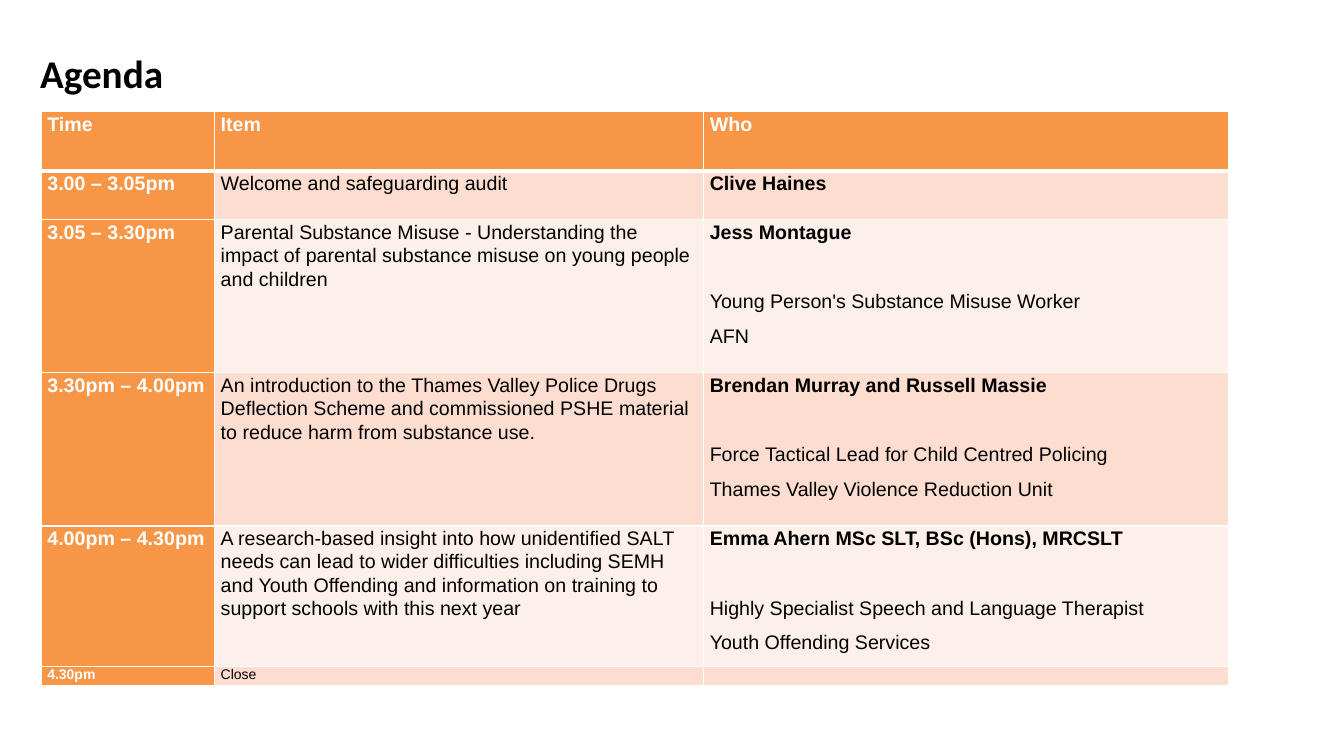
from dataclasses import dataclass

from lxml.etree import SubElement
from pptx import Presentation
from pptx.dml.color import RGBColor
from pptx.enum.text import MSO_ANCHOR as Anchor
from pptx.oxml.ns import qn
from pptx.util import Inches, Pt


@dataclass(frozen=True)
class Theme:
    orange: str = "F79646"
    band_dark: str = "FCDDCF"
    band_light: str = "FDEFE9"
    white: str = "FFFFFF"
    black: str = "000000"
    title_font: str = "Calibri"
    table_font: str = "Arial"
    title_size: int = 28
    table_size: int = 14
    closing_size: int = 10


@dataclass(frozen=True)
class AgendaRow:
    time: str
    item: str
    height: float
    who: str = ""
    roles: tuple[str, ...] = ()
    size: int = Theme.table_size


THEME = Theme()
COLUMN_WIDTHS = (1.72, 4.85, 5.21)
LINE_SPACING = 1.07
PARAGRAPH_GAP = 8
NAME_GAP = 33  # leaves one line free between a name and its roles

AGENDA = (
    AgendaRow("Time", "Item", 0.59, "Who"),
    AgendaRow("3.00 – 3.05pm", "Welcome and safeguarding audit", 0.48, "Clive Haines"),
    AgendaRow(
        "3.05 – 3.30pm",
        "Parental Substance Misuse - Understanding the impact of parental "
        "substance misuse on young people and children",
        1.52,
        "Jess Montague",
        ("Young Person's Substance Misuse Worker", "AFN"),
    ),
    AgendaRow(
        "3.30pm – 4.00pm",
        "An introduction to the Thames Valley Police Drugs Deflection Scheme and "
        "commissioned PSHE material to reduce harm from substance use.",
        1.52,
        "Brendan Murray and Russell Massie",
        ("Force Tactical Lead for Child Centred Policing",
         "Thames Valley Violence Reduction Unit"),
    ),
    AgendaRow(
        "4.00pm – 4.30pm",
        "A research-based insight into how unidentified SALT needs can lead to wider "
        "difficulties including SEMH and Youth Offending and information on training "
        "to support schools with this next year",
        1.39,
        "Emma Ahern MSc SLT, BSc (Hons), MRCSLT",
        ("Highly Specialist Speech and Language Therapist", "Youth Offending Services"),
    ),
    AgendaRow("4.30pm", "Close", 0.19, size=THEME.closing_size),
)


def style_font(font, name: str, size: int, color: str, bold: bool) -> None:
    font.name = name
    font.size = Pt(size)
    font.bold = bold
    font.color.rgb = RGBColor.from_string(color)


def set_borders(cell, bottom_width: int) -> None:
    """Draw white cell borders; they must precede the fill in the XML."""
    properties = cell._tc.get_or_add_tcPr()
    for side in ("L", "R", "T", "B"):
        width = bottom_width if side == "B" else 1
        line = SubElement(properties, qn(f"a:ln{side}"), w=str(Pt(width)))
        fill = SubElement(line, qn("a:solidFill"))
        SubElement(fill, qn("a:srgbClr"), val=THEME.white)


def fill_cell(cell, lines: tuple[str, ...], size: int, background: str,
              color: str, bold_first: bool, bottom_width: int) -> None:
    cell.margin_left = cell.margin_right = Inches(0.06)
    cell.margin_top = cell.margin_bottom = 0
    cell.vertical_anchor = Anchor.TOP
    set_borders(cell, bottom_width)
    cell.fill.solid()
    cell.fill.fore_color.rgb = RGBColor.from_string(background)

    frame = cell.text_frame
    for index, line in enumerate(lines):
        paragraph = frame.add_paragraph() if index else frame.paragraphs[0]
        first = index == 0
        paragraph.line_spacing = LINE_SPACING
        paragraph.space_after = Pt(NAME_GAP if first and len(lines) > 1 else PARAGRAPH_GAP)
        style_font(paragraph.font, THEME.table_font, size, color, bold_first and first)
        if line:
            paragraph.text = line
        else:
            # An empty cell takes its line height from the end mark
            SubElement(paragraph._p, qn("a:endParaRPr"), sz=str(size * 100))


def add_title(slide) -> None:
    box = slide.shapes.add_textbox(Inches(0.3), Inches(0.14), Inches(6.91), Inches(1.17))
    frame = box.text_frame
    frame.word_wrap = True
    frame.vertical_anchor = Anchor.MIDDLE
    paragraph = frame.paragraphs[0]
    paragraph.text = "Agenda"
    style_font(paragraph.font, THEME.title_font, THEME.title_size, THEME.black, True)


def add_agenda(slide) -> None:
    frame = slide.shapes.add_table(
        len(AGENDA), len(COLUMN_WIDTHS), Inches(0.41), Inches(1.11),
        Inches(sum(COLUMN_WIDTHS)), Inches(sum(entry.height for entry in AGENDA)))
    table = frame.table
    table.horz_banding = False
    for column, width in zip(table.columns, COLUMN_WIDTHS):
        column.width = Inches(width)

    for row_index, entry in enumerate(AGENDA):
        table.rows[row_index].height = Inches(entry.height)
        header = row_index == 0
        band = THEME.band_dark if row_index % 2 else THEME.band_light
        contents = ((entry.time,), (entry.item,), (entry.who, *entry.roles))
        for column_index, lines in enumerate(contents):
            accent = header or column_index == 0
            fill_cell(
                table.cell(row_index, column_index), lines, entry.size,
                background=THEME.orange if accent else band,
                color=THEME.white if accent else THEME.black,
                bold_first=accent or column_index == 2,
                bottom_width=3 if header else 1)


def main() -> None:
    presentation = Presentation()
    presentation.slide_width = Inches(13.33)
    presentation.slide_height = Inches(7.5)
    slide = presentation.slides.add_slide(presentation.slide_layouts[6])
    add_title(slide)
    add_agenda(slide)
    presentation.save("out.pptx")


if __name__ == "__main__":
    main()
